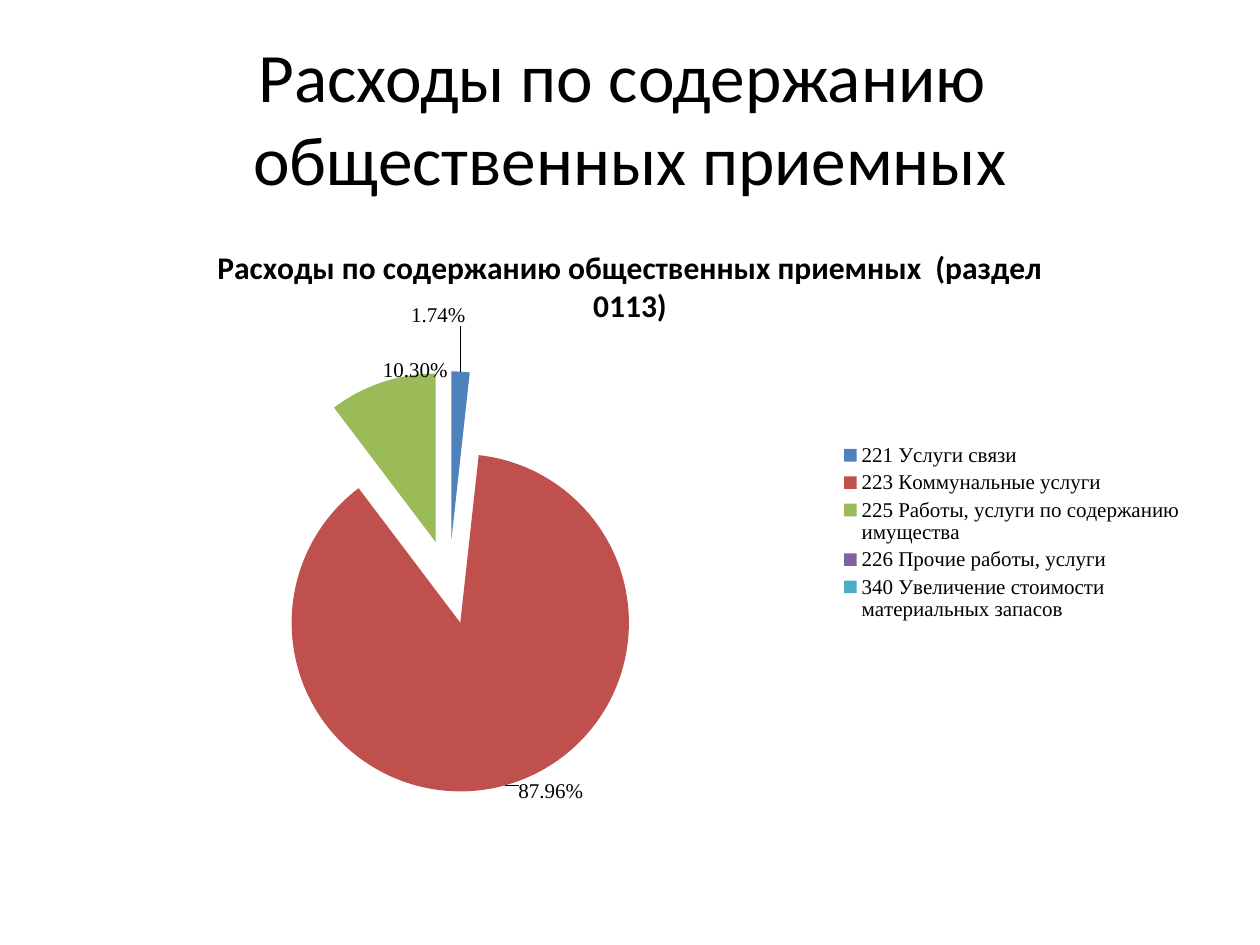
import pptx
import pptx.chart.data
import pptx.dml.color
import pptx.enum.chart
import pptx.enum.text
import pptx.oxml
import pptx.oxml.ns
import pptx.util
from dataclasses import dataclass


@dataclass(frozen=True)
class Theme:
    """Colours, fonts and type sizes of the slide."""
    ink: str = "000000"
    slices: tuple = ("4F81BD", "C0504D", "9BBB59", "8064A2", "4BACC6")
    heading_font: str = "Calibri"
    chart_font: str = "Times New Roman"
    heading_size: float = 39.6
    chart_title_size: float = 18
    base_size: float = 10
    label_size: float = 12


THEME = Theme()
WIDTH, HEIGHT = pptx.util.Inches(10), pptx.util.Inches(7.5)
MARGIN = 0.05
HEADING = "Расходы по содержанию \vобщественных приемных"
CHART_TITLE = "Расходы по содержанию общественных приемных  (раздел 0113)"
EXPENSES = {
    "221 Услуги связи": 1.74,
    "223 Коммунальные услуги": 87.96,
    "225 Работы, услуги по содержанию имущества": 10.3,
    "226 Прочие работы, услуги": None,
    "340 Увеличение стоимости материальных запасов": None,
}
LABEL_SHIFTS = ((-0.02, -0.06), (0.01, -0.02), (0.06, 0.01))
PLOT_AREA = {"x": 0.064, "y": 0.242, "w": 0.553, "h": 0.676}
PERCENT_FORMAT = "0.00%"


def frame(top, height):
    """Return a full-width frame from shares of the slide height."""
    return (int(WIDTH * MARGIN), int(HEIGHT * top),
            int(WIDTH * (1 - 2 * MARGIN)), int(HEIGHT * height))


def style(font, name, size, bold=False):
    """Apply a theme font in the ink colour."""
    font.name, font.size, font.bold = name, pptx.util.Pt(size), bold
    font.color.rgb = pptx.dml.color.RGBColor.from_string(THEME.ink)


def chart_xml(content):
    """Parse one chart element given without its namespace declaration."""
    tag, rest = content.split(" ", 1)
    namespace = pptx.oxml.ns.nsdecls("c")
    return pptx.oxml.parse_xml(f"{tag} {namespace} {rest}")


def manual_layout(inner=False, **shares):
    """Build a manual layout from shares of the chart size."""
    modes = ""
    if inner:
        modes = ('<c:layoutTarget val="inner"/><c:xMode val="edge"/>'
                 '<c:yMode val="edge"/>')
    values = "".join(f'<c:{key} val="{share}"/>' for key, share in shares.items())
    return chart_xml(f"<c:layout ><c:manualLayout>{modes}{values}"
                     "</c:manualLayout></c:layout>")


def add_heading(slide):
    """Fill and place the slide title."""
    heading = slide.shapes.title
    heading.left, heading.top, heading.width, heading.height = frame(0.04, 1 / 6)
    text = heading.text_frame
    text.text = HEADING
    text.word_wrap = True
    text.vertical_anchor = pptx.enum.text.MSO_ANCHOR.MIDDLE
    paragraph = text.paragraphs[0]
    paragraph.alignment = pptx.enum.text.PP_ALIGN.CENTER
    for run in paragraph.runs:
        style(run.font, THEME.heading_font, THEME.heading_size)


def add_percent_labels(series):
    """Show percentages outside the slices, each with its own shift."""
    outside = pptx.enum.chart.XL_LABEL_POSITION.OUTSIDE_END
    labels = series.data_labels
    labels.show_percentage, labels.show_value = True, False
    labels.number_format, labels.number_format_is_linked = PERCENT_FORMAT, False
    labels.position = outside
    style(labels.font, THEME.chart_font, THEME.label_size)
    for index, (x, y) in enumerate(LABEL_SHIFTS):
        label = series.points[index].data_label
        label.position = outside
        style(label.font, THEME.chart_font, THEME.label_size)
        element = labels._element.xpath(f"c:dLbl[c:idx/@val='{index}']")[0]
        element.xpath("c:showVal")[0].set("val", "0")
        element.xpath("c:showPercent")[0].set("val", "1")
        layout = manual_layout(x=x, y=y)
        element.xpath("c:idx")[0].addnext(layout)
        layout.addnext(chart_xml(
            f'<c:numFmt formatCode="{PERCENT_FORMAT}" sourceLinked="0"/>'))


def color_slices(series):
    """Explode the pie and colour its slices."""
    series._element.xpath("c:tx")[0].addnext(chart_xml('<c:explosion val="25"/>'))
    for index, color in enumerate(THEME.slices):
        fill = series.points[index].format.fill
        fill.solid()
        fill.fore_color.rgb = pptx.dml.color.RGBColor.from_string(color)


def add_expense_chart(slide):
    """Add the exploded pie of expenses with title and legend."""
    expenses = pptx.chart.data.CategoryChartData()
    expenses.categories = list(EXPENSES)
    expenses.add_series(CHART_TITLE, list(EXPENSES.values()))
    chart = slide.shapes.add_chart(
        pptx.enum.chart.XL_CHART_TYPE.PIE, *frame(7 / 30, 0.66), expenses).chart
    style(chart.font, THEME.heading_font, THEME.base_size)

    chart.has_title = True
    title = chart.chart_title.text_frame
    title.text = CHART_TITLE
    style(title.paragraphs[0].runs[0].font,
          THEME.heading_font, THEME.chart_title_size, bold=True)

    chart.has_legend = True
    chart.legend.position = pptx.enum.chart.XL_LEGEND_POSITION.RIGHT
    chart.legend.include_in_layout = False
    style(chart.legend.font, THEME.chart_font, THEME.label_size)

    plot = chart.plots[0]
    plot.vary_by_categories = True
    color_slices(plot.series[0])
    add_percent_labels(plot.series[0])

    plot_area = chart.element.xpath("c:chart/c:plotArea")[0]
    for layout in plot_area.xpath("c:layout"):
        plot_area.remove(layout)
    plot_area.insert(0, manual_layout(inner=True, **PLOT_AREA))


def main():
    """Build and save the slide."""
    deck = pptx.Presentation()
    deck.slide_width, deck.slide_height = WIDTH, HEIGHT
    slide = deck.slides.add_slide(deck.slide_layouts.get_by_name("Title Only"))
    add_heading(slide)
    add_expense_chart(slide)
    deck.save("out.pptx")


if __name__ == "__main__":
    main()
